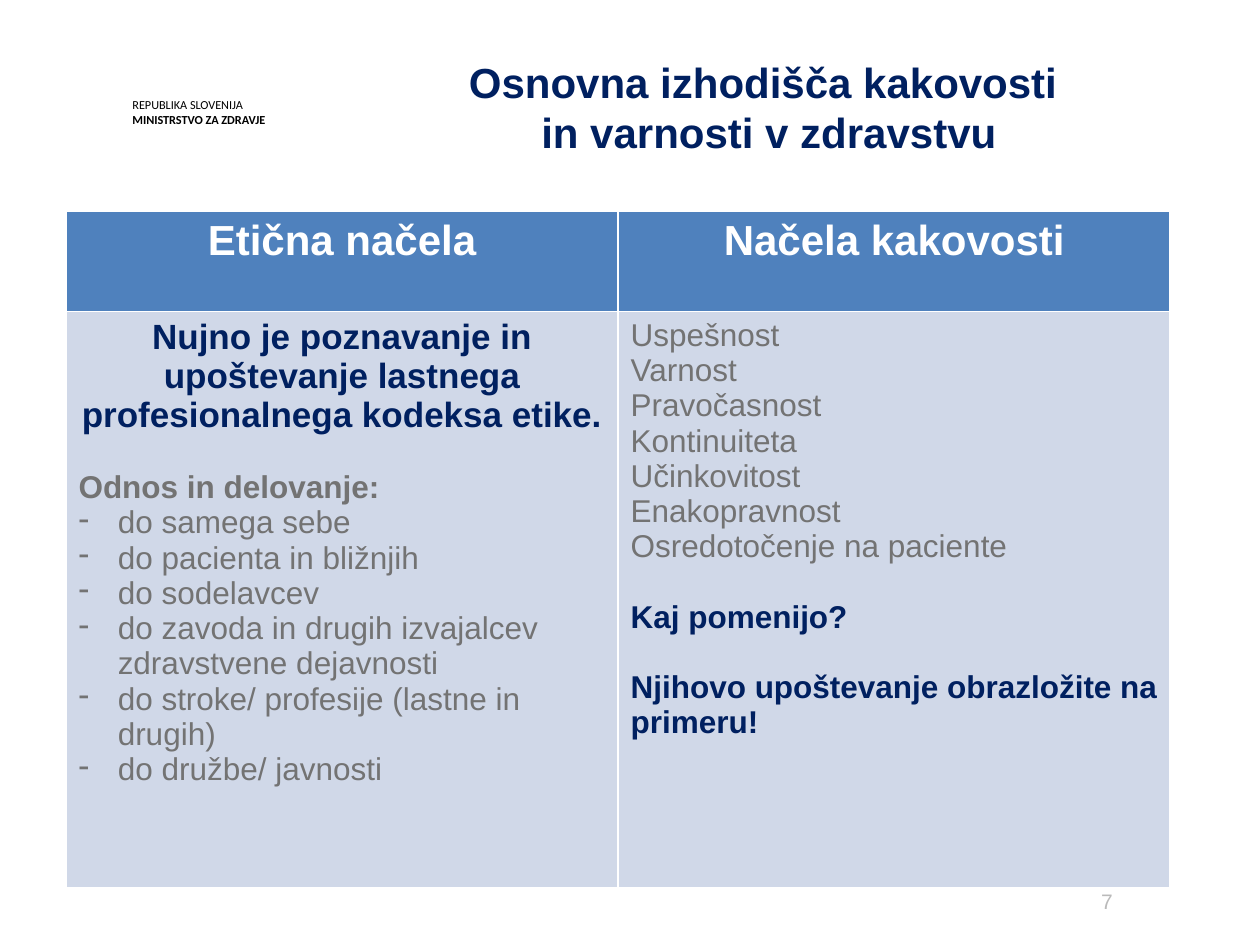
from lxml import etree
from pptx import Presentation
from pptx import util as u
from pptx.dml.color import RGBColor
from pptx.enum import text
from pptx.oxml.ns import qn

NAVY, GREY, WHITE = "002060", "737373", "FFFFFF"
HEADER_FILL, BODY_FILL = "4F81BD", "D0D8E8"
LEFT, CENTER, RIGHT = text.PP_ALIGN.LEFT, text.PP_ALIGN.CENTER, text.PP_ALIGN.RIGHT


def color(value):
    return RGBColor.from_string(value)


def style(para, size, value, bold=False, align=LEFT, font="Arial"):
    para.alignment = align
    for span in para.runs:
        span.font.name = font
        span.font.size = u.Pt(size)
        span.font.bold = bold
        span.font.color.rgb = color(value)


deck = Presentation()
deck.slide_width, deck.slide_height = u.Cm(25.4), u.Cm(19.05)
page = deck.slides.add_slide(deck.slide_layouts[5])

# Ministry name
box = page.shapes.add_textbox(u.Cm(2.67), u.Cm(1.96), u.Cm(3.35), u.Cm(0.56))
frame = box.text_frame
frame.margin_left = frame.margin_top = frame.margin_right = frame.margin_bottom = 0
frame.word_wrap = True
frame.text = "REPUBLIKA SLOVENIJA\nMINISTRSTVO ZA ZDRAVJE"
for para, bold in zip(frame.paragraphs, (False, True)):
    para.line_spacing = u.Pt(8.4)
    style(para, 7, "000000", bold, font="Calibri")

# Title
title = page.shapes.title
title.left, title.top, title.width, title.height = u.Cm(9.4), u.Cm(1.14), u.Cm(12.2), u.Cm(2.06)
frame = title.text_frame
frame.margin_left = frame.margin_top = frame.margin_right = frame.margin_bottom = 0
frame.auto_size = text.MSO_AUTO_SIZE.NONE
frame.word_wrap = False
frame.vertical_anchor = text.MSO_ANCHOR.TOP
frame.text = "Osnovna izhodišča kakovosti \vin varnosti v zdravstvu"
style(frame.paragraphs[0], 24, NAVY, True, CENTER)

# Principles table: the default table style draws the white borders
table = page.shapes.add_table(2, 2, u.Cm(1.33), u.Cm(4.25), u.Cm(22.26), u.Cm(13.64)).table
table.rows[0].height, table.rows[1].height = u.Cm(2.03), u.Cm(11.61)
for cell, heading in zip(table.rows[0].cells, ("Etična načela", "Načela kakovosti")):
    cell.fill.solid()
    cell.fill.fore_color.rgb = color(HEADER_FILL)
    cell.text_frame.text = heading
    style(cell.text_frame.paragraphs[0], 24, WHITE, True, CENTER)
for cell in table.rows[1].cells:
    cell.fill.solid()
    cell.fill.fore_color.rgb = color(BODY_FILL)

ethics, quality = (cell.text_frame for cell in table.rows[1].cells)
ethics.text = "\n".join([
    "Nujno je poznavanje in upoštevanje lastnega profesionalnega kodeksa etike.",
    "Odnos in delovanje:",
    "do samega sebe",
    "do pacienta in bližnjih",
    "do sodelavcev",
    "do zavoda in drugih izvajalcev zdravstvene dejavnosti",
    "do stroke/ profesije (lastne in drugih)",
    "do družbe/ javnosti",
])
lead, intro, *duties = ethics.paragraphs
style(lead, 20, NAVY, True, CENTER)
style(intro, 18, GREY, True)
intro.space_before = u.Pt(20)
for para in duties:
    props = para._p.get_or_add_pPr()
    props.set("marL", str(u.Cm(0.79)))
    props.set("indent", str(-u.Cm(0.79)))
    etree.SubElement(props, qn("a:buChar")).set("char", "-")
    style(para, 18, GREY)

quality.text = "\n".join([
    "Uspešnost", "Varnost", "Pravočasnost", "Kontinuiteta", "Učinkovitost",
    "Enakopravnost", "Osredotočenje na paciente",
    "Kaj pomenijo?", "Njihovo upoštevanje obrazložite na primeru!",
])
*principles, question, task = quality.paragraphs
for para in principles:
    style(para, 18, GREY)
for para in (question, task):
    style(para, 18, NAVY, True)
    para.space_before = u.Pt(20)

# Page number
box = page.shapes.add_textbox(u.Cm(18.21), u.Cm(17.65), u.Cm(4.47), u.Cm(1.02))
box.text_frame.word_wrap = True
box.text_frame.vertical_anchor = text.MSO_ANCHOR.MIDDLE
box.text_frame.text = "7"
style(box.text_frame.paragraphs[0], 12, "BABABA", align=RIGHT)

deck.save("out.pptx")
